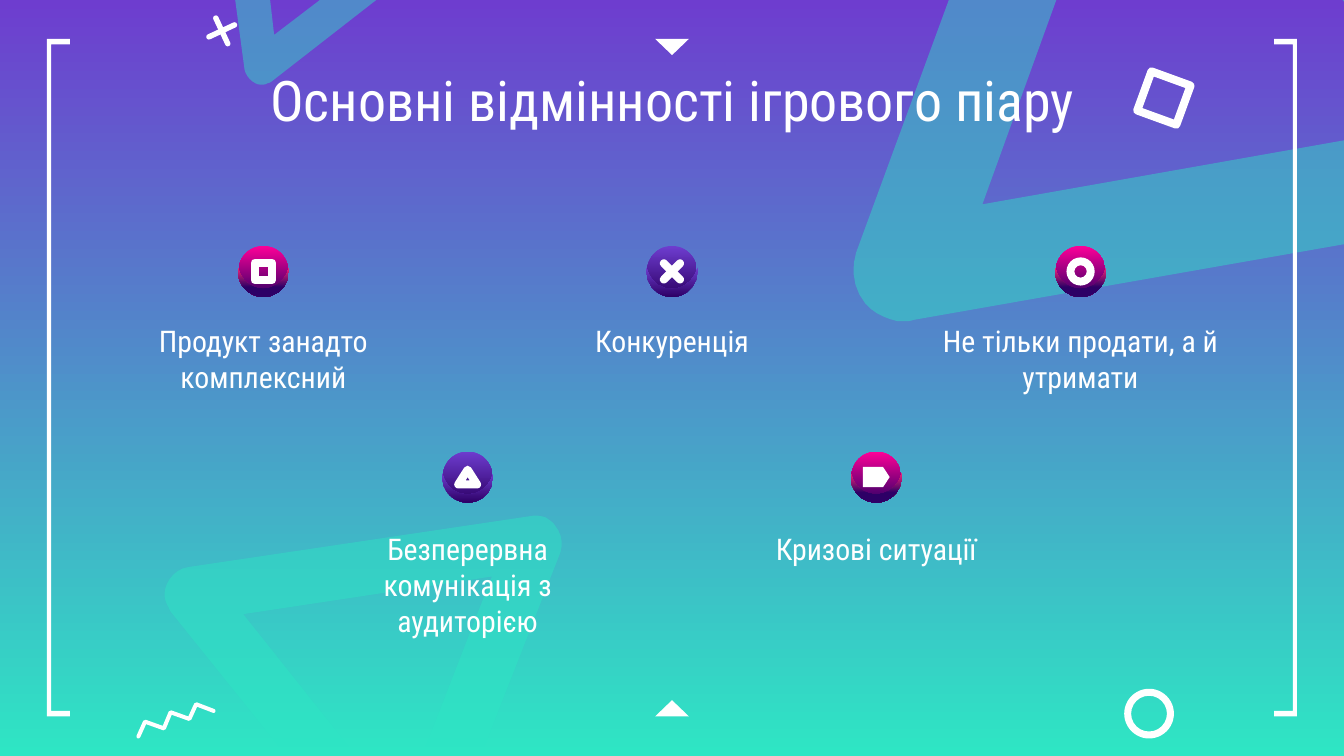
import dataclasses

import lxml.etree
import pptx
import pptx.dml.color
import pptx.enum.shapes
import pptx.enum.text
import pptx.oxml.ns
import pptx.util

Inches = pptx.util.Inches
Preset = pptx.enum.shapes.MSO_SHAPE


@dataclasses.dataclass
class Theme:
    white: str = "FFFFFF"
    violet: str = "6E3DCF"
    mint: str = "2EE6C4"
    pink: str = "FF0098"
    rose: str = "F42579"
    indigo: str = "2D0066"
    font: str = "Roboto Condensed"
    title_size: int = 30
    label_size: int = 16


theme = Theme()
rgb = pptx.dml.color.RGBColor.from_string
presentation = pptx.Presentation()
presentation.slide_width = Inches(10)
presentation.slide_height = Inches(10) * 9 // 16
slide = presentation.slides.add_slide(presentation.slide_layouts[6])


def trace(contours, colour, closed=True):
    builder = None
    for start, *steps in contours:
        points = [start]
        for step in steps:
            if len(step) == 2:
                points.append(step)
                continue
            x0, y0 = points[-1]
            x1, y1, x2, y2, x3, y3 = step
            for t in (0.2, 0.4, 0.6, 0.8, 1):
                a, b, c, d = (1 - t) ** 3, 3 * t * (1 - t) ** 2, 3 * t * t * (1 - t), t ** 3
                points.append((a * x0 + b * x1 + c * x2 + d * x3, a * y0 + b * y1 + c * y2 + d * y3))
        points = [(Inches(x), Inches(y)) for x, y in points]
        if builder is None:
            builder = slide.shapes.build_freeform(*points[0])
        else:
            builder.move_to(*points[0])
        builder.add_line_segments(points[1:], close=closed)
    shape = builder.convert_to_shape()
    shape.shadow.inherit = False
    shape.fill.solid()
    shape.fill.fore_color.rgb = rgb(colour)
    shape.line.fill.background()
    return shape


def place(preset, center_x, center_y, width, height, rotation=0, adjustment=None, stroke=0):
    shape = slide.shapes.add_shape(
        preset, Inches(center_x - width / 2), Inches(center_y - height / 2), Inches(width), Inches(height))
    shape.rotation = rotation
    shape.shadow.inherit = False
    if adjustment is not None:
        shape.adjustments[0] = adjustment
    painted, empty = (shape.line.fill, shape.fill) if stroke else (shape.fill, shape.line.fill)
    empty.background()
    painted.solid()
    painted.fore_color.rgb = rgb(theme.white)
    if stroke:
        shape.line.width = Inches(stroke)
        line_element = shape._element.spPr.find(pptx.oxml.ns.qn("a:ln"))
        lxml.etree.SubElement(line_element, pptx.oxml.ns.qn("a:round"))
    return shape


backdrop = slide.background.fill
backdrop.gradient()
backdrop.gradient_angle = 270
for stop, colour, position in zip(backdrop.gradient_stops, (theme.violet, theme.mint), (0, 1)):
    stop.color.rgb = rgb(colour)
    stop.position = position

bottom_band = [
    [(3.66, 4.29), (1.81, 4.57), (2.98, 6.04)],
    [(4.06, 3.85), (4.09, 3.87, 4.12, 3.89, 4.13, 3.91), (4.18, 3.97, 4.19, 4.04, 4.17, 4.11),
     (3.23, 6.51), (3.21, 6.54, 3.19, 6.57, 3.17, 6.59), (2.74, 6.38), (1.27, 4.55),
     (1.26, 4.53, 1.25, 4.51, 1.24, 4.49), (1.22, 4.45, 1.22, 4.4, 1.24, 4.35),
     (1.27, 4.28, 1.33, 4.23, 1.4, 4.22), (3.95, 3.84), (3.99, 3.83, 4.03, 3.84, 4.06, 3.85)],
]
right_band = [
    [(10.98, 0), (11.35, 0.44), (11.35, 1.58), (6.8, 2.38), (6.77, 2.39, 6.75, 2.39, 6.73, 2.39),
     (6.71, 2.39, 6.7, 2.39, 6.68, 2.39), (6.59, 2.37, 6.5, 2.33, 6.44, 2.26),
     (6.35, 2.15, 6.33, 2.01, 6.37, 1.88), (7.06, 0), (7.86, 0), (7.31, 1.52), (10.76, 0.91), (9.99, 0)],
]
left_band = [
    [(2.8, 0), (2.03, 0.6), (2.02, 0.61, 2, 0.62, 1.99, 0.62), (1.98, 0.63, 1.96, 0.63, 1.95, 0.63),
     (1.93, 0.63, 1.92, 0.63, 1.9, 0.62), (1.86, 0.6, 1.83, 0.56, 1.82, 0.52),
     (1.75, 0), (2.01, 0), (2.04, 0.26), (2.38, 0)],
]
for band in (bottom_band, right_band, left_band):
    shape = trace(band, theme.mint)
    colour_element = shape._element.spPr.find(".//" + pptx.oxml.ns.qn("a:srgbClr"))
    lxml.etree.SubElement(colour_element, pptx.oxml.ns.qn("a:alpha"), val="45000")

for center_y, rotation in ((0.35, 180), (5.27, 0)):
    place(Preset.ISOSCELES_TRIANGLE, 5, center_y, 0.25, 0.12, rotation)
place(Preset.RECTANGLE, 8.66, 0.73, 0.31, 0.31, 20, stroke=0.06)
for rotation in (65, -25):
    place(Preset.ROUNDED_RECTANGLE, 1.65, 0.23, 0.25, 0.04, rotation, 0.5)
for outer, inner, tip in ((0.35, 0.38, 0.52), (9.65, 9.62, 9.48)):
    trace([[(outer, 0.29), (outer, 5.33), (tip, 5.33), (tip, 5.29),
            (inner, 5.29), (inner, 0.33), (tip, 0.33), (tip, 0.29)]], theme.white)
zigzag = trace([[(1.03, 5.48), (1.08, 5.37), (1.22, 5.42), (1.27, 5.3),
                 (1.41, 5.35), (1.46, 5.24), (1.59, 5.29)]], theme.white, closed=False)
zigzag.fill.background()
zigzag.line.color.rgb = rgb(theme.white)
zigzag.line.width = Inches(0.03)
zigzag._element.spPr.find(pptx.oxml.ns.qn("a:ln")).set("cap", "rnd")
place(Preset.DONUT, 8.55, 5.31, 0.37, 0.37, adjustment=0.14)

texts = [("Основні відмінності ігрового піару", 1.03, 0.39, 7.95, 0.91, 0.1, 0.1, theme.title_size)]
pink_badge = ((theme.pink, theme.indigo, 1), (theme.rose, theme.indigo, 0.67))
violet_badge = ((theme.violet, theme.indigo, 1),) * 2
points = [
    ("Продукт занадто комплексний", 0, pink_badge, Preset.RECTANGLE, 0.13, 0.13, (0,), None, 0.06),
    ("Безперервна комунікація з аудиторією", 1, violet_badge,
     Preset.ISOSCELES_TRIANGLE, 0.14, 0.11, (0,), None, 0.06),
    ("Конкуренція", 2, violet_badge, Preset.ROUNDED_RECTANGLE, 0.23, 0.06, (45, -45), 0.5, 0),
    ("Кризові ситуації", 3, pink_badge, Preset.PENTAGON, 0.2, 0.15, (0,), 0.33, 0),
    ("Не тільки продати, а й утримати", 4, pink_badge, Preset.DONUT, 0.21, 0.21, (0,), 0.28, 0),
]
for label, column, gradients, preset, width, height, rotations, adjustment, stroke in points:
    x = 5 + 1.52 * (column - 2)
    y, label_top = ((2.02, 2.22), (3.55, 3.77))[column % 2]
    disc = place(Preset.OVAL, x, y, 0.37, 0.38)
    crescent = trace([[
        (x - 0.19, y - 0.03), (x - 0.19, y),
        (x - 0.19, y + 0.11, x - 0.1, y + 0.19, x, y + 0.19),
        (x + 0.1, y + 0.19, x + 0.19, y + 0.11, x + 0.19, y), (x + 0.19, y - 0.03),
        (x + 0.17, y + 0.06, x + 0.09, y + 0.13, x, y + 0.13),
        (x - 0.1, y + 0.13, x - 0.17, y + 0.06, x - 0.19, y - 0.03),
    ]], theme.indigo)
    for shape, (top_colour, bottom_colour, end) in zip((disc, crescent), gradients):
        shape.fill.gradient()
        shape.fill.gradient_angle = 270
        first, last = shape.fill.gradient_stops
        first.color.rgb, first.position = rgb(top_colour), 0
        last.color.rgb, last.position = rgb(bottom_colour), end
    for rotation in rotations:
        place(preset, x, y, width, height, rotation, adjustment, stroke)
    texts.append((label, x - 1.18, label_top, 2.36, 0.83, 0.18, 0, theme.label_size))

for text, left, top, width, height, inset_top, inset_bottom, size in texts:
    box = slide.shapes.add_textbox(Inches(left), Inches(top), Inches(width), Inches(height))
    text_frame = box.text_frame
    text_frame.word_wrap = True
    text_frame.margin_top = Inches(inset_top)
    text_frame.margin_bottom = Inches(inset_bottom)
    text_frame.text = text
    paragraph = text_frame.paragraphs[0]
    paragraph.alignment = pptx.enum.text.PP_ALIGN.CENTER
    font = paragraph.runs[0].font
    font.name = theme.font
    font.size = pptx.util.Pt(size)
    font.color.rgb = rgb(theme.white)

presentation.save("out.pptx")
